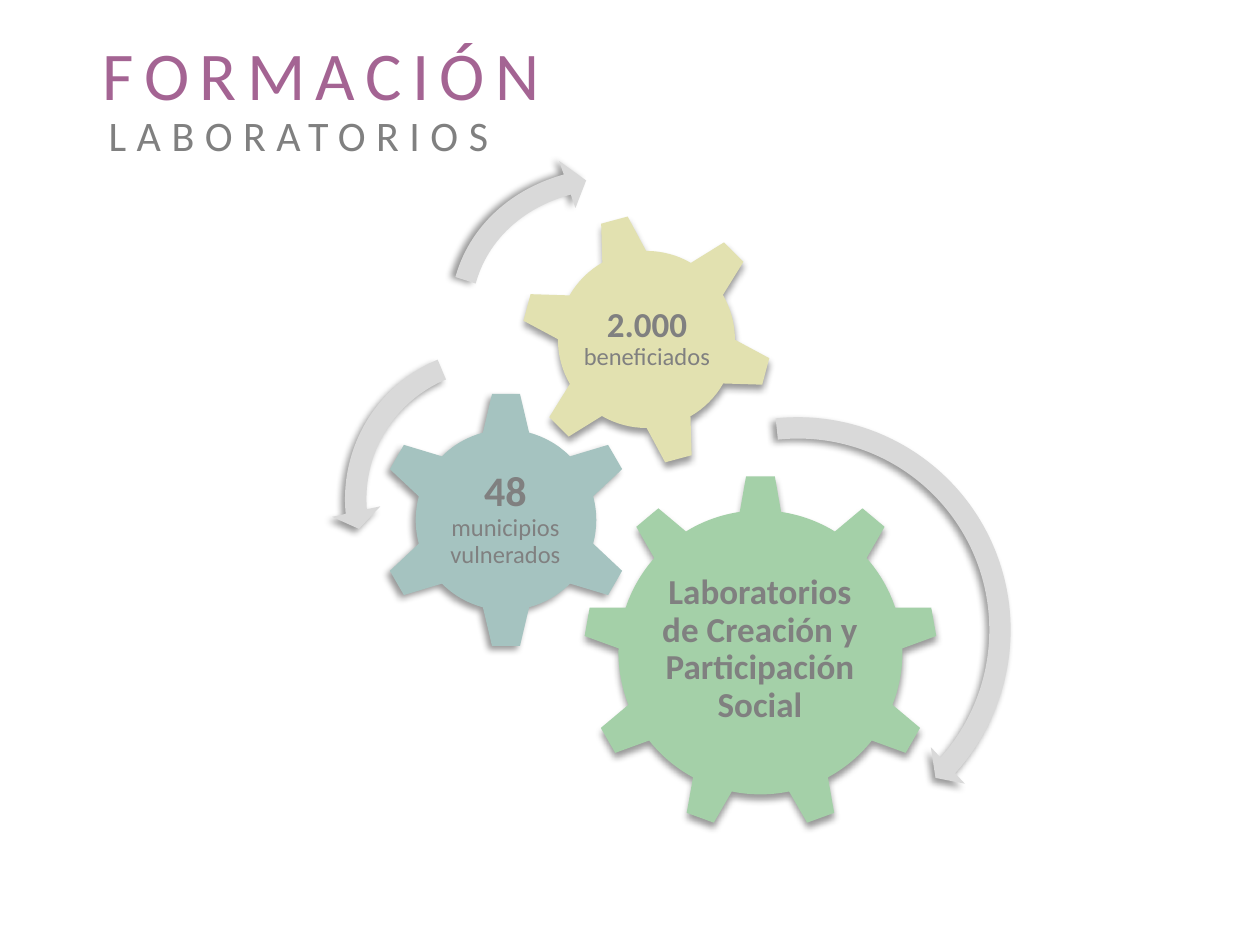
import dataclasses

import lxml.etree
import pptx
import pptx.dml.color
import pptx.enum.shapes
import pptx.enum.text
import pptx.oxml.ns
import pptx.util

GEOMETRY = pptx.enum.shapes.MSO_SHAPE
ANCHOR = pptx.enum.text.MSO_ANCHOR
CENTER = pptx.enum.text.PP_ALIGN.CENTER


@dataclasses.dataclass(frozen=True)
class Theme:
    """Colours, type sizes and font of the slide."""

    font: str = "Calibri"
    plum: str = "A46493"
    grey: str = "808080"
    green: str = "A4D0A8"
    teal: str = "A5C3C0"
    sand: str = "E2E1B0"
    silver: str = "D9D9D9"
    title: int = 39
    subtitle: int = 24
    big: int = 24
    strong: int = 20
    gap: int = 16
    small: int = 14


THEME = Theme()


def px(length):
    """Turn pixels, 126 to the inch, into EMU."""
    return round(length * pptx.util.Inches(1) / 126)


def rgb(colour):
    """Return a colour object for a hex string."""
    return pptx.dml.color.RGBColor.from_string(colour)


def add_run(paragraph, text, size, colour, bold=False):
    """Append one formatted run and return it."""
    run = paragraph.add_run()
    run.text = text
    run.font.name = THEME.font
    run.font.size = pptx.util.Pt(size)
    run.font.bold = bold
    run.font.color.rgb = rgb(colour)
    return run


def prepare_frame(frame, anchor, margin):
    """Set wrapping, anchor and margins, and return the centred paragraph."""
    frame.word_wrap = True
    frame.auto_size = pptx.enum.text.MSO_AUTO_SIZE.NONE
    frame.vertical_anchor = anchor
    frame.margin_left = frame.margin_right = px(margin)
    frame.margin_top = frame.margin_bottom = px(margin)
    paragraph = frame.paragraphs[0]
    paragraph.alignment = CENTER
    return paragraph


def fill_heading(placeholder, box, text, size, colour):
    """Place a heading placeholder with widely spaced letters."""
    placeholder.left, placeholder.top, placeholder.width, placeholder.height = map(px, box)
    paragraph = prepare_frame(placeholder.text_frame, ANCHOR.TOP, 0)
    paragraph.space_before = pptx.util.Pt(0)
    paragraph.line_spacing = pptx.util.Pt(29.9)
    run = add_run(paragraph, text, size, colour)
    run.font._element.set("spc", "600")


def add_shadow(shape, direction):
    """Give a shape a soft shadow towards a direction in degrees."""
    shape.shadow.inherit = False
    qn = pptx.oxml.ns.qn
    effects = shape._element.spPr.find(qn("a:effectLst"))
    shadow = lxml.etree.SubElement(
        effects,
        qn("a:outerShdw"),
        blurRad=str(pptx.util.Pt(4)),
        dist=str(pptx.util.Pt(3)),
        dir=str(direction * 60000),
        rotWithShape="0",
    )
    black = lxml.etree.SubElement(shadow, qn("a:srgbClr"), val="000000")
    lxml.etree.SubElement(black, qn("a:alpha"), val="40000")


def add_flat_shape(slide, geometry, box, colour, shadow_direction, rotation=0):
    """Add a filled shape without outline and with a soft shadow."""
    shape = slide.shapes.add_shape(geometry, *map(px, box))
    shape.fill.solid()
    shape.fill.fore_color.rgb = rgb(colour)
    shape.line.fill.background()
    shape.rotation = rotation
    add_shadow(shape, shadow_direction)
    return shape


def add_gear(slide, geometry, box, colour, shadow_direction, label_box, runs, rotation=0):
    """Add a gear and its upright label, placed relative to the gear."""
    add_flat_shape(slide, geometry, box, colour, shadow_direction, rotation)
    left, top, width, height = label_box
    label = slide.shapes.add_textbox(px(box[0] + left), px(box[1] + top), px(width), px(height))
    paragraph = prepare_frame(label.text_frame, ANCHOR.MIDDLE, 4)
    paragraph.line_spacing = 0.9
    for text, size, bold in runs:
        add_run(paragraph, text, size, THEME.grey, bold)


def add_turn_arrow(slide, geometry, box, band, head, angles, shadow_direction, rotation=0):
    """Add a curved arrow; band and head in percent, angles in degrees."""
    arrow = add_flat_shape(slide, geometry, box, THEME.silver, shadow_direction, rotation)
    values = [band / 100, *(angle * 0.6 for angle in angles), head / 100]
    for index, value in enumerate(values):
        arrow.adjustments[index] = value


def add_headings(slide):
    """Fill the title and subtitle placeholders."""
    subtitle = slide.placeholders[1]
    fill_heading(slide.shapes.title, (34, 62, 575, 58), "FORMACIÓN", THEME.title, THEME.plum)
    fill_heading(subtitle, (11, 108, 575, 50), "LABORATORIOS", THEME.subtitle, THEME.grey)


def add_gear_train(slide):
    """Add the three gears and the arrows that show how they turn."""
    add_gear(
        slide, GEOMETRY.GEAR_9, (583, 475, 355, 355), THEME.green, 90, (71, 83, 212, 183),
        [("Laboratorios de Creación y Participación Social", THEME.strong, True)],
    )
    add_gear(
        slide, GEOMETRY.GEAR_6, (377, 391, 258, 258), THEME.teal, 135, (64, 65, 129, 127),
        [("48", THEME.big, True), (" ", THEME.gap, False),
         ("municipios vulnerados", THEME.small, False)],
    )
    add_gear(
        slide, GEOMETRY.GEAR_6, (520, 213, 253, 253), THEME.sand, 90, (56, 55, 142, 142),
        [("2.000", THEME.strong, True), (" ", THEME.gap, False),
         ("beneficiados", THEME.small, False)],
        rotation=345,
    )
    add_turn_arrow(slide, GEOMETRY.CIRCULAR_ARROW, (571, 403, 454, 454),
                   4.7, 5.5, (4.98, 42.11, 263.98), 135)
    add_turn_arrow(slide, GEOMETRY.LEFT_CIRCULAR_ARROW, (331, 334, 330, 330),
                   6.5, 7.5, (7.17, 174.82, 247.3), 135)
    add_turn_arrow(slide, GEOMETRY.CIRCULAR_ARROW, (432, 158, 416, 355),
                   6, 7, (6.57, 221.9, 175.14), 180, rotation=22.4)


def main():
    """Build the slide and save it."""
    deck = pptx.Presentation()
    deck.slide_width, deck.slide_height = px(1260), px(945)
    slide = deck.slides.add_slide(deck.slide_layouts[0])
    add_gear_train(slide)
    add_headings(slide)
    deck.save("out.pptx")


if __name__ == "__main__":
    main()
